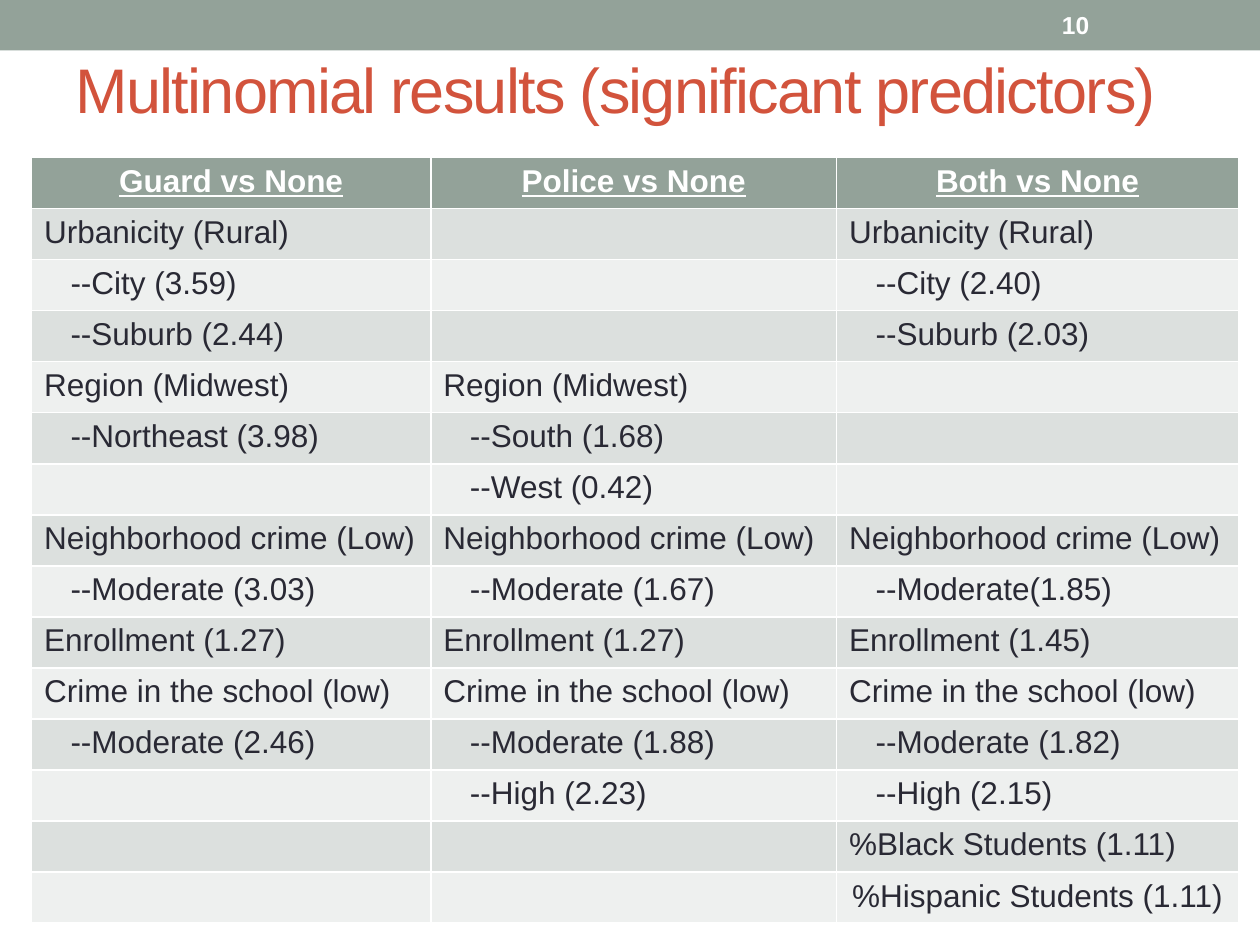
"""Build the slide of significant predictors from the multinomial models."""
from pptx import Presentation
from pptx.dml.color import RGBColor
from pptx.enum.shapes import MSO_SHAPE
from pptx.enum.text import MSO_ANCHOR, PP_ALIGN
from pptx.util import Emu, Pt

SCALE = 9144
SAGE, RUST, INK, WHITE = "93A299", "D2533C", "292934", "FFFFFF"
BANDS = ["DCE0DE", "EEF0EF"]
CELL_MARGIN, LEVEL_INDENT = 10, 21

HEADINGS = ["Guard vs None", "Police vs None", "Both vs None"]
PREDICTORS = [
    ["Urbanicity (Rural)", "", "Urbanicity (Rural)"],
    ["--City (3.59)", "", "--City (2.40)"],
    ["--Suburb (2.44)", "", "--Suburb (2.03)"],
    ["Region (Midwest)", "Region (Midwest)", ""],
    ["--Northeast (3.98)", "--South (1.68)", ""],
    ["", "--West (0.42)", ""],
    ["Neighborhood crime (Low)"] * 3,
    ["--Moderate (3.03)", "--Moderate (1.67)", "--Moderate(1.85)"],
    ["Enrollment (1.27)", "Enrollment (1.27)", "Enrollment (1.45)"],
    ["Crime in the school (low)"] * 3,
    ["--Moderate (2.46)", "--Moderate (1.88)", "--Moderate (1.82)"],
    ["", "--High (2.23)", "--High (2.15)"],
    ["", "", "%Black Students (1.11)"],
    ["", "", "%Hispanic Students (1.11)"],
]


def px(*lengths):
    return [Emu(length * SCALE) for length in lengths]


def style(paragraph, size, color, bold=False):
    font = paragraph.font
    font.name, font.size, font.bold = "Arial", Pt(size), bold
    font.color.rgb = RGBColor.from_string(color)


prs = Presentation()
prs.slide_width, prs.slide_height = px(1000, 750)
slide = prs.slides.add_slide(prs.slide_layouts[5])

banner = slide.shapes.add_shape(MSO_SHAPE.RECTANGLE, *px(0, 0, 1000, 40))
banner.shadow.inherit = False
banner.fill.solid()
banner.fill.fore_color.rgb = RGBColor.from_string(SAGE)
banner.line.fill.background()

title = slide.shapes.title
title.left, title.top, title.width, title.height = px(50, 33, 900, 75)
title.text_frame.text = "Multinomial results (significant predictors)"
title.text_frame.vertical_anchor = MSO_ANCHOR.MIDDLE
heading = title.text_frame.paragraphs[0]
heading.alignment = PP_ALIGN.LEFT
style(heading, 36, RUST)
heading.runs[0].font._element.set("spc", "-100")

rows = [HEADINGS] + PREDICTORS
results = slide.shapes.add_table(len(rows), len(HEADINGS), *px(25, 125, 958, 608)).table
for column, width in zip(results.columns, px(317, 322, 319)):
    column.width = width

for r, entries in enumerate(rows):
    is_header = r == 0
    for c, entry in enumerate(entries):
        cell = results.cell(r, c)
        cell.fill.solid()
        cell.fill.fore_color.rgb = RGBColor.from_string(SAGE if is_header else BANDS[(r - 1) % 2])
        indent = LEVEL_INDENT if entry.startswith("--") else 0
        cell.margin_left = px(CELL_MARGIN + indent)[0]
        cell.text = entry
        label = cell.text_frame.paragraphs[0]
        style(label, 18, WHITE if is_header else INK, is_header)
        if is_header:
            label.font.underline = True
        if is_header or entry.startswith("%Hispanic"):
            label.alignment = PP_ALIGN.CENTER

page_number = slide.shapes.add_textbox(*px(833, 2, 117, 36)).text_frame
page_number.word_wrap = True
page_number.vertical_anchor = MSO_ANCHOR.MIDDLE
page_number.text = "10"
style(page_number.paragraphs[0], 14, WHITE, True)

prs.save("out.pptx")
